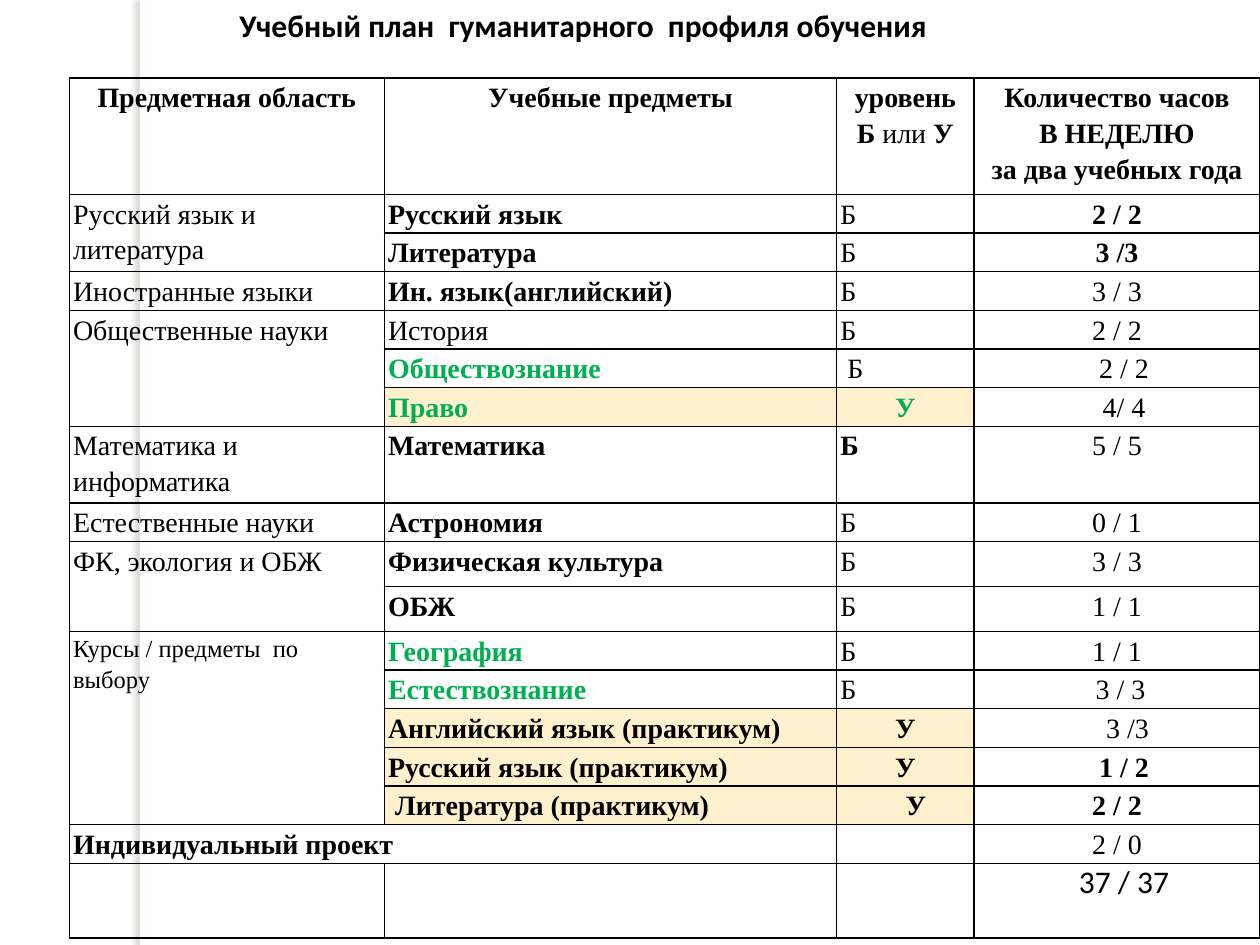
from lxml import etree
from pptx import Presentation
from pptx.dml.color import RGBColor
from pptx.enum.shapes import MSO_SHAPE
from pptx.enum.text import MSO_ANCHOR, MSO_AUTO_SIZE, PP_ALIGN
from pptx.oxml.ns import qn
from pptx.util import Pt

RECTANGLE = MSO_SHAPE.RECTANGLE
LEFT, CENTER = PP_ALIGN.LEFT, PP_ALIGN.CENTER
TOP = MSO_ANCHOR.TOP
NO_AUTOFIT = MSO_AUTO_SIZE.NONE

BLACK, WHITE, GREEN, CREAM = "000000", "FFFFFF", "00B050", "FFF1CE"

# Text between asterisks is bold; None continues the merged cell.
HEADER = ("*Предметная область*", "*Учебные предметы*",
          "*уровень*\n*Б *или* У*",
          "*Количество часов*\n*В НЕДЕЛЮ*\n*за два учебных года*")
SUBJECTS = [
    ("Русский язык и литература", "*Русский язык*", "Б", "*2 / 2*"),
    (None, "*Литература*", "Б", "*3 /3*"),
    ("Иностранные языки", "*Ин. язык(английский)*", "Б", "3 / 3"),
    ("Общественные науки", "История", "Б", "2 / 2"),
    (None, "*Обществознание*", "Б", "2 / 2"),
    (None, "*Право*", "*У*", "4/ 4"),
    ("Математика и информатика", "*Математика*", "*Б*", "5 / 5"),
    ("Естественные науки", "*Астрономия*", "Б", "0 / 1"),
    ("ФК, экология и ОБЖ", "*Физическая культура*", "Б", "3 / 3"),
    (None, "*ОБЖ*", "Б", "1 / 1"),
    ("Курсы / предметы  по выбору", "*География*", "Б", "1 / 1"),
    (None, "*Естествознание*", "Б", "3 / 3"),
    (None, "*Английский язык (практикум)*", "*У*", "3 /3"),
    (None, "*Русский язык (практикум)*", "*У*", "*1 / 2*"),
    (None, "*Литература (практикум)*", "*У*", "*2 / 2*"),
]
TOTALS = [("*Индивидуальный проект*", None, "", "2 / 0"),
          ("", "", "", "37 / 37")]
ROWS = [HEADER, *SUBJECTS, *TOTALS]
PROJECT_ROW, TOTAL_ROW = len(ROWS) - 2, len(ROWS) - 1
ELECTIVES_ROW = 11

COLUMN_WIDTHS = (180, 258.5, 78.5, 163.4)
ROW_HEIGHT = 22.1
SPECIAL_HEIGHTS = {0: 66.4, 7: 43.8, 9: 25.7, 10: 25.7, TOTAL_ROW: 42.6}
GREEN_CELLS = {(5, 1), (6, 1), (6, 2), (11, 1), (12, 1)}
INDENTS = {(5, 2): 4, (5, 3): 8, (6, 3): 8, (12, 3): 4, (13, 3): 12,
           (14, 3): 8, (15, 1): 4, (15, 2): 12, (TOTAL_ROW, 3): 8}


def color(value):
    return RGBColor.from_string(value)


class SlideBuilder:
    heading_font = "Calibri"
    table_font = "Times New Roman"

    def __init__(self, presentation):
        self.slide = presentation.slides.add_slide(presentation.slide_layouts[5])

    def format_run(self, run, font, size, bold, text_color=BLACK):
        run.font.name = font
        run.font.size = Pt(size)
        run.font.bold = bold
        run.font.color.rgb = color(text_color)

    def title(self, text, left, top, width, height):
        shape = self.slide.shapes.title
        shape.left, shape.top = Pt(left), Pt(top)
        shape.width, shape.height = Pt(width), Pt(height)
        frame = shape.text_frame
        frame.text = text
        frame.auto_size = NO_AUTOFIT
        frame.vertical_anchor = TOP
        frame.paragraphs[0].alignment = LEFT
        self.format_run(frame.paragraphs[0].runs[0], self.heading_font, 18, True)

    def strip(self, left, top, width, height):
        """Draw a white band with a soft shadow on its left side."""
        shape = self.slide.shapes.add_shape(
            RECTANGLE, Pt(left), Pt(top), Pt(width), Pt(height))
        shape.fill.solid()
        shape.fill.fore_color.rgb = color(WHITE)
        shape.line.fill.background()
        shape.shadow.inherit = False
        effects = shape._element.spPr.find(qn("a:effectLst"))
        shadow = etree.SubElement(effects, qn("a:outerShdw"), blurRad=str(Pt(3)),
                                  dist=str(Pt(3)), dir="10800000")
        tint = etree.SubElement(shadow, qn("a:srgbClr"), val="736F63")
        etree.SubElement(tint, qn("a:alpha"), val="25000")

    def border(self, cell):
        properties = cell._tc.get_or_add_tcPr()
        for side in ("lnL", "lnR", "lnT", "lnB"):
            line = etree.SubElement(properties, qn(f"a:{side}"), w=str(Pt(1)))
            fill = etree.SubElement(line, qn("a:solidFill"))
            etree.SubElement(fill, qn("a:srgbClr"), val=BLACK)

    def cell(self, cell, text, font, size, text_color, fill, alignment,
             indent, spacing):
        self.border(cell)
        if fill:
            cell.fill.solid()
            cell.fill.fore_color.rgb = color(fill)
        else:
            cell.fill.background()
        cell.margin_left = cell.margin_right = Pt(2.2)
        cell.margin_top = cell.margin_bottom = 0
        if not text:
            return
        frame = cell.text_frame
        frame.text = text.replace("*", "")
        for paragraph, marked in zip(frame.paragraphs, text.split("\n")):
            paragraph.text = ""
            paragraph.alignment = alignment
            paragraph.line_spacing = spacing
            if indent:
                paragraph._p.get_or_add_pPr().set("marL", str(Pt(indent)))
            for index, part in enumerate(marked.split("*")):
                if part:
                    run = paragraph.add_run()
                    run.text = part
                    self.format_run(run, font, size, index % 2 == 1, text_color)

    def curriculum_table(self, left, top):
        heights = [SPECIAL_HEIGHTS.get(row, ROW_HEIGHT) for row in range(len(ROWS))]
        table = self.slide.shapes.add_table(
            len(ROWS), len(COLUMN_WIDTHS), Pt(left), Pt(top),
            Pt(sum(COLUMN_WIDTHS)), Pt(sum(heights))).table
        table.first_row = table.horz_banding = False
        for column, width in zip(table.columns, COLUMN_WIDTHS):
            column.width = Pt(width)
        for row, height in zip(table.rows, heights):
            row.height = Pt(height)

        area_start = 0
        for row, texts in enumerate(ROWS):
            advanced = texts[2] == "*У*"
            is_total = row == TOTAL_ROW
            for column, text in enumerate(texts):
                middle = column in (1, 2)
                fill = None
                if middle and advanced:
                    fill = CREAM
                elif middle and 1 <= row <= 3:
                    fill = WHITE
                centered = row == 0 or column == 3 or (column == 2 and advanced)
                size = 14 if (row, column) == (ELECTIVES_ROW, 0) else 16
                self.cell(
                    table.cell(row, column), text,
                    self.heading_font if is_total else self.table_font,
                    18 if is_total else size,
                    GREEN if (row, column) in GREEN_CELLS else BLACK,
                    fill, CENTER if centered else LEFT,
                    INDENTS.get((row, column), 0), 1 if is_total else 1.15)
            if texts[0] is not None:
                area_start = row
            elif row + 1 == len(ROWS) or ROWS[row + 1][0] is not None:
                table.cell(area_start, 0).merge(table.cell(row, 0))
        table.cell(PROJECT_ROW, 0).merge(table.cell(PROJECT_ROW, 1))


def main():
    presentation = Presentation()
    presentation.slide_width, presentation.slide_height = Pt(720), Pt(540)
    builder = SlideBuilder(presentation)
    builder.strip(80, 0, 5.75, 540)
    builder.title("Учебный план  гуманитарного  профиля обучения",
                  129.6, 0, 562.3, 29)
    builder.curriculum_table(39.6, 44.7)
    presentation.save("out.pptx")


if __name__ == "__main__":
    main()
